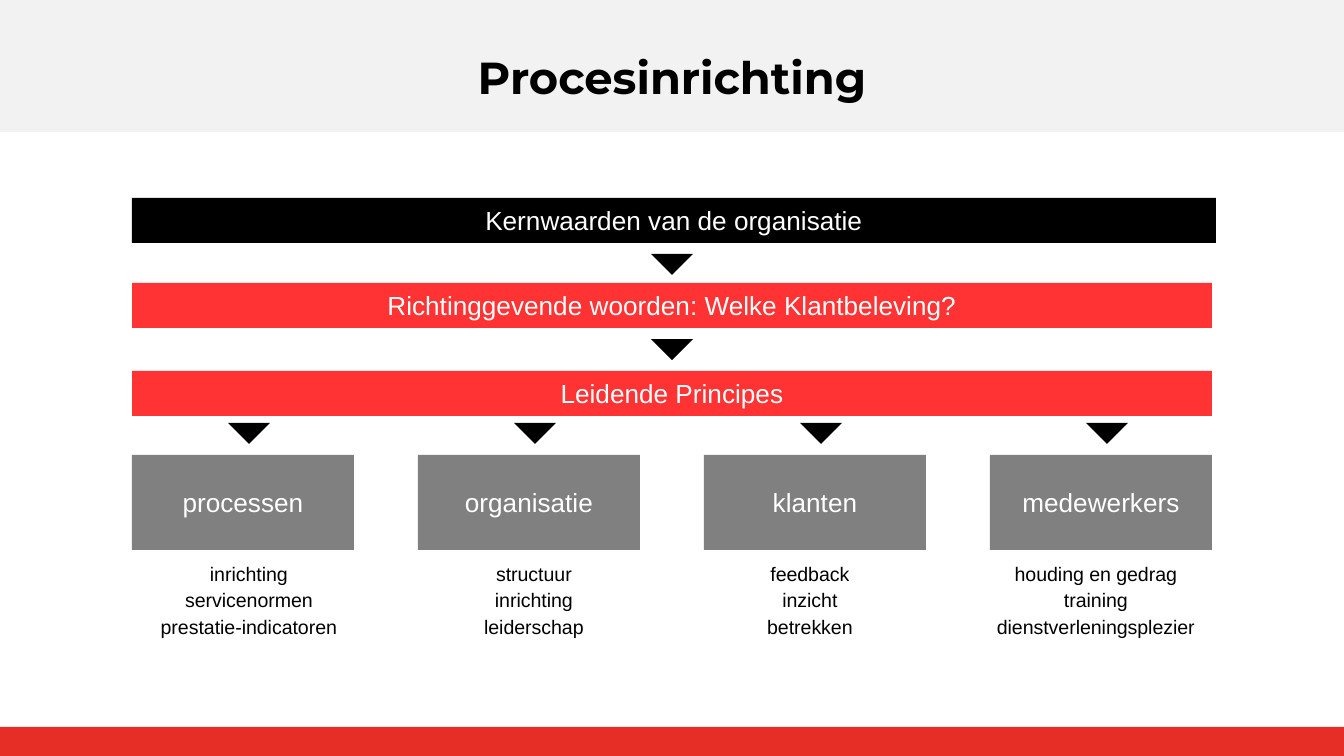
import pptx
import pptx.dml.color
import pptx.enum.shapes
import pptx.enum.text
import pptx.util

Color = pptx.dml.color.RGBColor
Shape = pptx.enum.shapes.MSO_SHAPE
Anchor = pptx.enum.text.MSO_ANCHOR

BLACK = Color(0x00, 0x00, 0x00)
WHITE = Color(0xFF, 0xFF, 0xFF)
PALE = Color(0xF2, 0xF2, 0xF2)
CRIMSON = Color(0xE6, 0x2E, 0x26)
RED = Color(0xFF, 0x33, 0x33)
GRAY = Color(0x80, 0x80, 0x80)

BARS = [
    ("Kernwaarden van de organisatie", 198, 1084, BLACK),
    ("Richtinggevende woorden: Welke Klantbeleving?", 283, 1080, RED),
    ("Leidende Principes", 371, 1080, RED),
]
PILLARS = [
    ("processen", 122, ["inrichting", "servicenormen", "prestatie-indicatoren"]),
    ("organisatie", 407, ["structuur", "inrichting", "leiderschap"]),
    ("klanten", 683, ["feedback", "inzicht", "betrekken"]),
    ("medewerkers", 969, ["houding en gedrag", "training", "dienstverleningsplezier"]),
]
LEFT, PITCH = 132, 286


def px(length):
    return pptx.util.Emu(round(length * 914400 / 134.4))


class Slide:
    """Hold the style and the current page, and draw each kind of element."""

    font = "Arial"
    label_size = 14
    list_size = 10.5

    def __init__(self, page):
        self.page = page

    def set_text(self, para, text, size, color, font=None, bold=False):
        para.text = text
        para.alignment = pptx.enum.text.PP_ALIGN.CENTER
        para.font.name = font or self.font
        para.font.size = pptx.util.Pt(size)
        para.font.bold = bold
        para.font.color.rgb = color

    def shape(self, kind, left, top, width, height, color):
        shape = self.page.shapes.add_shape(kind, px(left), px(top), px(width), px(height))
        shape.shadow.inherit = False
        shape.fill.solid()
        shape.fill.fore_color.rgb = color
        shape.line.fill.background()
        return shape

    def title(self, text, left, top, width, height):
        title = self.page.shapes.title
        title.left, title.top, title.width, title.height = map(px, (left, top, width, height))
        title.text_frame.vertical_anchor = Anchor.MIDDLE
        self.set_text(title.text_frame.paragraphs[0], text, 24, BLACK, "Montserrat", True)
        self.page.shapes._spTree.append(title._element)

    def label(self, text, left, top, width, height, color, wrap=True):
        box = self.shape(Shape.RECTANGLE, left, top, width, height, color)
        box.text_frame.word_wrap = wrap
        box.text_frame.vertical_anchor = Anchor.MIDDLE
        self.set_text(box.text_frame.paragraphs[0], text, self.label_size, WHITE)

    def arrow(self, left, top):
        self.shape(Shape.ISOSCELES_TRIANGLE, left, top, 42, 21, BLACK).rotation = 180

    def items(self, lines, left, top, width, height):
        frame = self.page.shapes.add_textbox(px(left), px(top), px(width), px(height)).text_frame
        frame.word_wrap = True
        frame.margin_left = frame.margin_right = px(8)
        frame.margin_top = frame.margin_bottom = px(1)
        for index, line in enumerate(lines):
            para = frame.add_paragraph() if index else frame.paragraphs[0]
            self.set_text(para, line, self.list_size, BLACK)
            para.line_spacing = 0.7
            para.space_before = pptx.util.Pt(5.5 if index else 0)


def main():
    deck = pptx.Presentation()
    deck.slide_width, deck.slide_height = px(1344), px(756)
    slide = Slide(deck.slides.add_slide(deck.slide_layouts[5]))

    slide.shape(Shape.RECTANGLE, 0, 0, 1344, 132, PALE)
    slide.shape(Shape.RECTANGLE, 0, 727, 1344, 29, CRIMSON)
    slide.title("Procesinrichting", 111, 37, 1122, 79)

    for text, top, width, color in BARS:
        slide.label(text, LEFT, top, width, 45, color)
    for top in (254, 339):
        slide.arrow(651, top)

    for column, (name, list_left, lines) in enumerate(PILLARS):
        left = LEFT + column * PITCH
        slide.arrow(left + 96, 423)
        slide.label(name, left, 455, 222, 95, GRAY, wrap=False)
        slide.items(lines, list_left, 567, 254, 78)

    deck.save("out.pptx")


if __name__ == "__main__":
    main()
